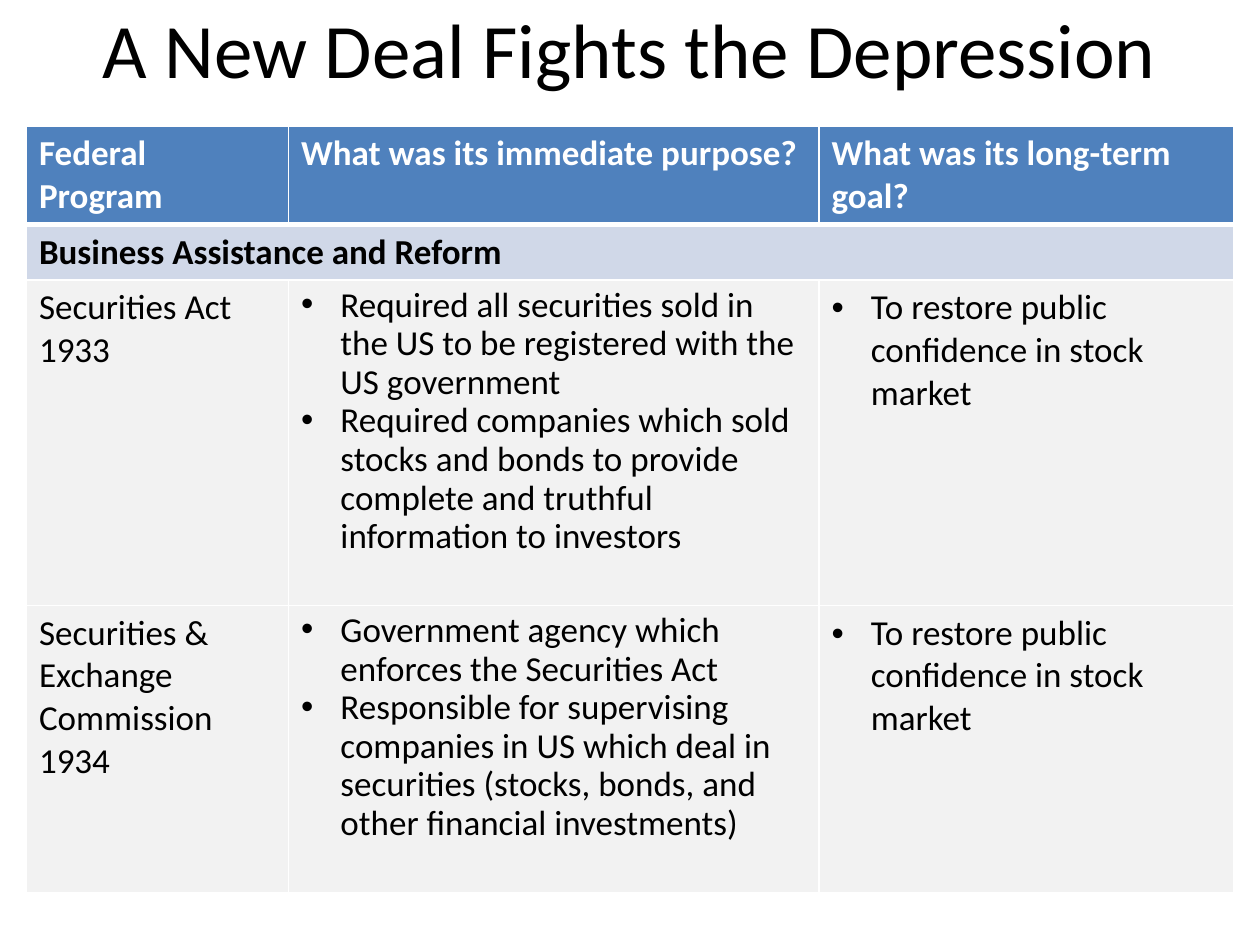
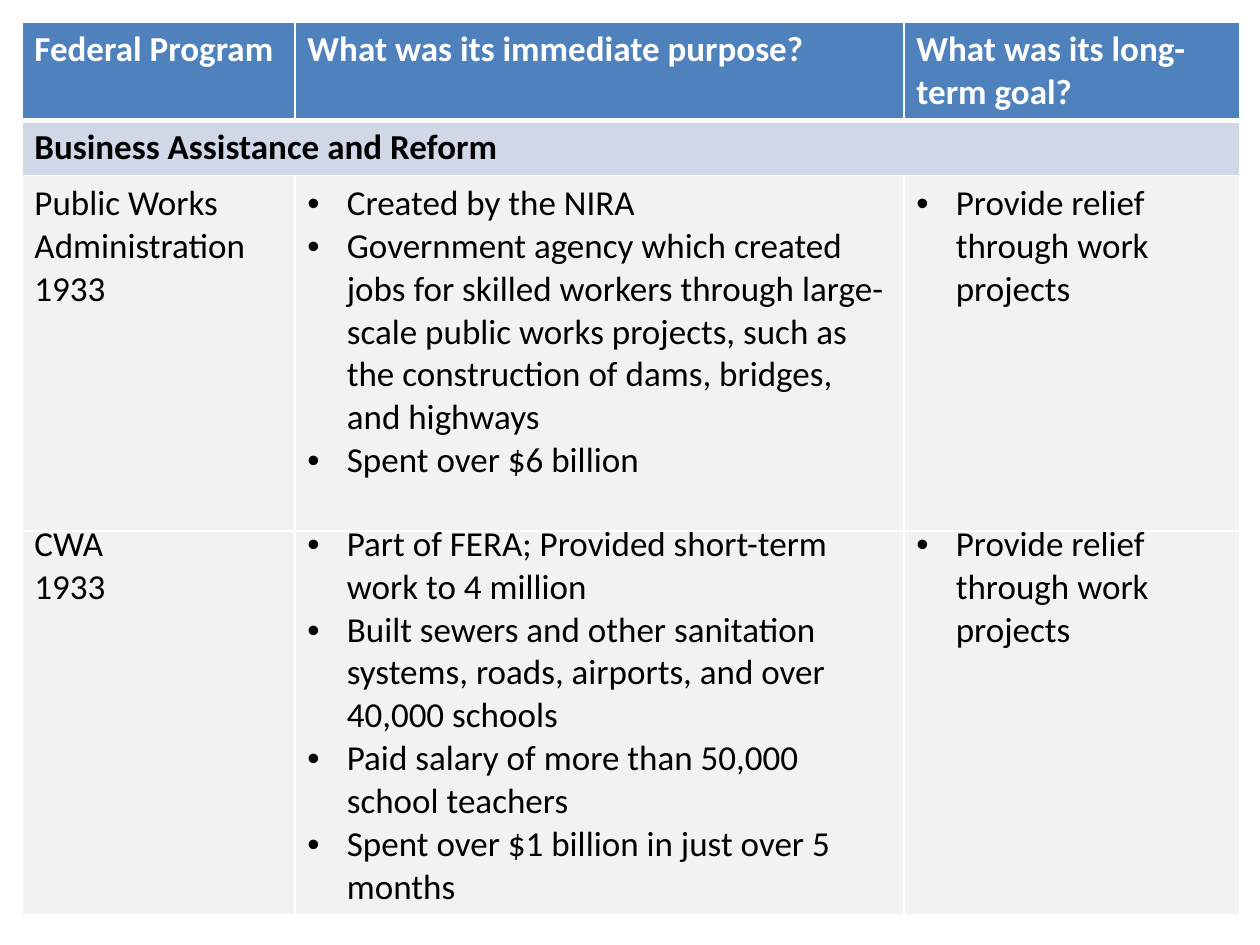
import pptx
import pptx.util
import pptx.dml.color
import pptx.enum.text
import pptx.oxml
import pptx.oxml.ns
from lxml import etree

Pt = pptx.util.Pt
RGB = pptx.dml.color.RGBColor
qn = pptx.oxml.ns.qn

BLUE = RGB(0x4F, 0x81, 0xBD)
PALE = RGB(0xD0, 0xD8, 0xE8)
GRAY = RGB(0xF2, 0xF2, 0xF2)
WHITE = RGB(0xFF, 0xFF, 0xFF)
BLACK = RGB(0, 0, 0)
FONT = "Calibri"
INDENT = Pt(22.5)

HEAD = [["Federal Program"], ["What was its immediate purpose?"], ["What was its long-term goal?"]]
BAND = [["Business Assistance and Reform"], [], []]
TOP = [("head", 56, HEAD), ("band", 31.6, BAND)]


def fill_cell(cell, kind, col, lines, tight):
    cell.fill.solid()
    cell.fill.fore_color.rgb = {"head": BLUE, "band": PALE, "body": GRAY}[kind]
    props = cell._tc.get_or_add_tcPr()
    for i, side in enumerate(("lnL", "lnR", "lnT", "lnB")):
        width = 3 if kind == "head" and side == "lnB" else 1
        line = etree.Element(qn("a:" + side), w=str(Pt(width)))
        paint = etree.SubElement(line, qn("a:solidFill"))
        etree.SubElement(paint, qn("a:srgbClr"), val=str(WHITE))
        props.insert(i, line)
    frame = cell.text_frame
    for i, text in enumerate(lines):
        para = frame.add_paragraph() if i else frame.paragraphs[0]
        para.text = text
        if kind == "body" and col > 0:
            form = para._p.get_or_add_pPr()
            form.set("marL", str(INDENT))
            form.set("indent", str(-INDENT))
            etree.SubElement(form, qn("a:buFont"), typeface="Arial")
            etree.SubElement(form, qn("a:buChar"), char="•")
        if tight and kind == "body" and col == 1:
            para.line_spacing = 0.9
        para.font.name = FONT
        para.font.size = Pt(20)
        para.font.bold = kind != "body"
        para.font.color.rgb = WHITE if kind == "head" else BLACK


def add_grid(slide, left, top, widths, rows, tight=False):
    high = sum(row[1] for row in rows)
    grid = slide.shapes.add_table(len(rows), len(widths), Pt(left), Pt(top), Pt(sum(widths)), Pt(high)).table
    grid.first_row = False
    grid.horz_banding = False
    for col, width in enumerate(widths):
        grid.columns[col].width = Pt(width)
    for r, (kind, height, cells) in enumerate(rows):
        grid.rows[r].height = Pt(height)
        for col, lines in enumerate(cells):
            fill_cell(grid.cell(r, col), kind, col, lines, tight)
        if kind == "band":
            grid.cell(r, 0).merge(grid.cell(r, len(widths) - 1))


deck = pptx.Presentation()
deck.slide_width = Pt(720)
deck.slide_height = Pt(540)

slide = deck.slides.add_slide(deck.slide_layouts[5])
title = slide.shapes.title
title.left, title.top, title.width, title.height = Pt(36), Pt(-18), Pt(648), Pt(90)
title.text = "A New Deal Fights the Depression"
title.text_frame.vertical_anchor = pptx.enum.text.MSO_ANCHOR.MIDDLE
para = title.text_frame.paragraphs[0]
para.alignment = pptx.enum.text.PP_ALIGN.CENTER
para.font.name = FONT
para.font.size = Pt(44)
para.font.color.rgb = BLACK

goal = ["To restore public confidence in stock market"]
acts = [
    ("body", 186, [
        ["Securities Act", "1933"],
        ["Required all securities sold in the US to be registered with the US government",
         "Required companies which sold stocks and bonds to provide complete and truthful information to investors"],
        goal]),
    ("body", 164, [
        ["Securities & Exchange Commission", "1934"],
        ["Government agency which enforces the Securities Act",
         "Responsible for supervising companies in US which deal in securities "
         "(stocks, bonds, and other financial investments)"],
        goal]),
]
add_grid(slide, 15.12, 72, [149.76, 303.12, 236.88], TOP + acts, tight=True)

slide = deck.slides.add_slide(deck.slide_layouts[6])
goal = ["Provide relief through work projects"]
works = [("body", 203, [
    ["Public Works Administration", "1933"],
    ["Created by the NIRA",
     "Government agency which created jobs for skilled workers through large-scale public works projects, "
     "such as the construction of dams, bridges, and highways",
     "Spent over $6 billion"],
    goal])]
civil = [("body", 223.2, [
    ["CWA", "1933"],
    ["Part of FERA; Provided short-term work to 4 million",
     "Built sewers and other sanitation systems, roads, airports, and over 40,000 schools",
     "Paid salary of more than 50,000 school teachers",
     "Spent over $1 billion in just over 5 months"],
    goal])]
widths = [156, 348, 192]
add_grid(slide, 12.5, 295.2, widths, civil)
add_grid(slide, 12.5, 12.5, widths, TOP + works)

deck.save("out.pptx")
